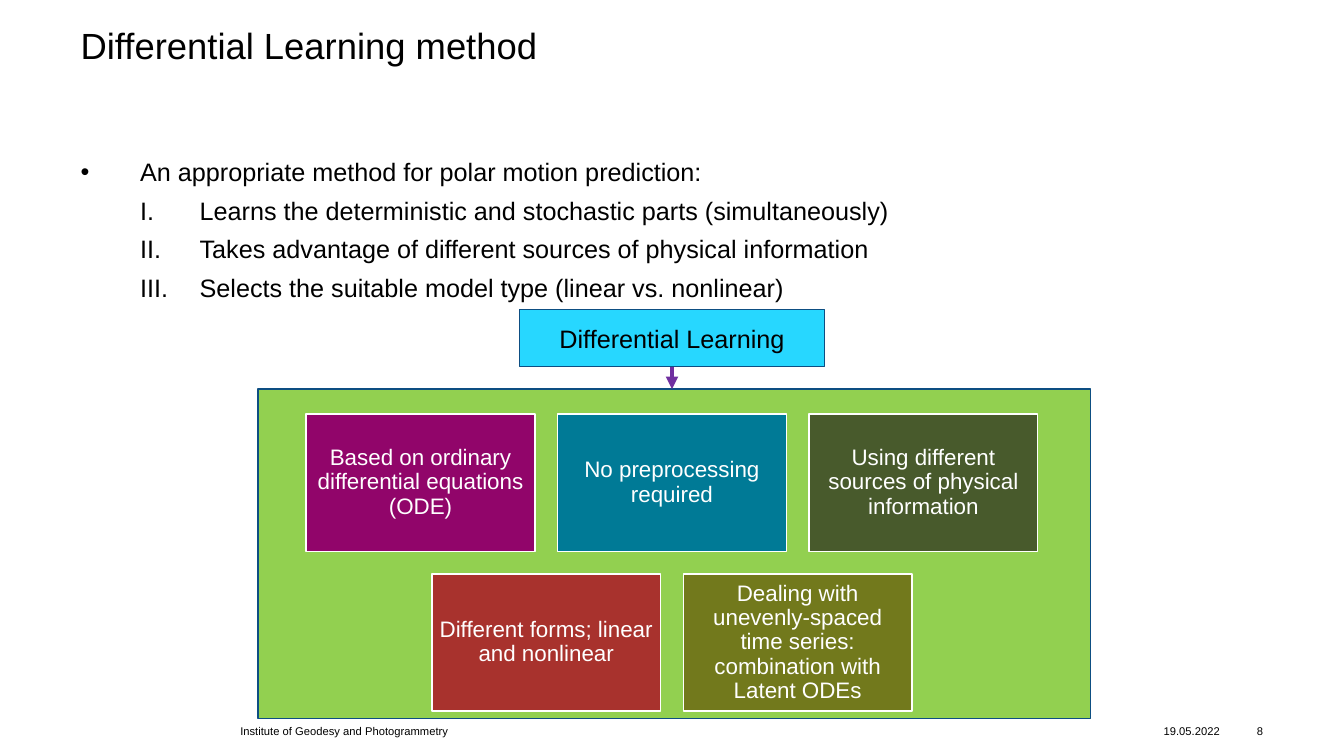
from lxml.etree import SubElement
from pptx import Presentation
from pptx.dml.color import RGBColor
from pptx.enum.shapes import MSO_CONNECTOR, MSO_SHAPE
from pptx.enum.text import MSO_ANCHOR, PP_ALIGN
from pptx.oxml.ns import qn
from pptx.util import Pt


def write(frame, text, size, color="000000", align=PP_ALIGN.LEFT, anchor=MSO_ANCHOR.MIDDLE, inset=0):
    """Fill the first paragraph of a text frame and return that paragraph."""
    frame.word_wrap = True
    frame.vertical_anchor = anchor
    frame.margin_left = frame.margin_right = frame.margin_top = frame.margin_bottom = Pt(inset)
    paragraph = frame.paragraphs[0]
    paragraph.alignment = align
    run = paragraph.add_run()
    run.text = text
    run.font.name = "Arial"
    run.font.size = Pt(size)
    run.font.color.rgb = RGBColor.from_string(color)
    return paragraph


def add_box(left, top, width, height, fill, line):
    box = slide.shapes.add_shape(MSO_SHAPE.RECTANGLE, Pt(left), Pt(top), Pt(width), Pt(height))
    box.shadow.inherit = False
    box.fill.solid()
    box.fill.fore_color.rgb = RGBColor.from_string(fill)
    box.line.color.rgb = RGBColor.from_string(line)
    box.line.width = Pt(1)
    return box


presentation = Presentation()
presentation.slide_width, presentation.slide_height = Pt(960), Pt(540)
slide = presentation.slides.add_slide(presentation.slide_layouts[5])

# Title
title = slide.shapes.title
title.left, title.top, title.width, title.height = Pt(57.6), Pt(20.2), Pt(844.6), Pt(70.6)
write(title.text_frame, "Differential Learning method", 26, anchor=MSO_ANCHOR.TOP).line_spacing = 0.9

# Advantages: one bullet with a numbered level below it
advantages = slide.shapes.add_textbox(Pt(57.6), Pt(111.6), Pt(844.6), Pt(108)).text_frame
write(advantages, "An appropriate method for polar motion prediction:", 18, anchor=MSO_ANCHOR.TOP)
for advantage in [
    "Learns the deterministic and stochastic parts (simultaneously)",
    "Takes advantage of different sources of physical information",
    "Selects the suitable model type (linear vs. nonlinear)",
]:
    paragraph = advantages.add_paragraph()
    paragraph.level = 1
    paragraph.space_before = Pt(6)
    run = paragraph.add_run()
    run.text = advantage
    run.font.name = "Arial"
    run.font.size = Pt(18)
    run.font.color.rgb = RGBColor.from_string("000000")

INDENT = Pt(42.5)
for paragraph in advantages.paragraphs:
    properties = paragraph._p.get_or_add_pPr()
    properties.set("marL", str(INDENT * (paragraph.level + 1)))
    properties.set("indent", str(-INDENT))
    SubElement(properties, qn("a:buFont"), typeface="Arial")
    if paragraph.level:
        SubElement(properties, qn("a:buAutoNum"), type="romanUcPeriod")
    else:
        SubElement(properties, qn("a:buChar"), char="•")

# Diagram: heading, arrow and panel of cards
CENTER = 480
add_box(184.3, 278, 594.7, 235.4, "92D050", "0D4E82")
heading = add_box(CENTER - 109, 221, 218, 41, "27D7FF", "0D4E82")
write(heading.text_frame, "Differential Learning", 18, align=PP_ALIGN.CENTER)

arrow = slide.shapes.add_connector(MSO_CONNECTOR.STRAIGHT, Pt(CENTER), Pt(262), Pt(CENTER), Pt(278))
arrow.begin_connect(heading, 2)
arrow.line.color.rgb = RGBColor.from_string("7030A0")
arrow.line.width = Pt(3)
SubElement(arrow.line._get_or_add_ln(), qn("a:tailEnd"), type="triangle")
SubElement(arrow._element.spPr, qn("a:effectLst"))

CARD_WIDTH, CARD_HEIGHT, GAP = 163.4, 98, 16.2
card_rows = [
    [
        ("Based on ordinary differential equations (ODE)", "91056A"),
        ("No preprocessing required", "007A96"),
        ("Using different sources of physical information", "485A2C"),
    ],
    [
        ("Different forms; linear and nonlinear", "A8322D"),
        ("Dealing with unevenly-spaced time series: combination with Latent ODEs", "72791C"),
    ],
]
for row, cards in enumerate(card_rows):
    row_width = len(cards) * (CARD_WIDTH + GAP) - GAP
    top = 295.8 + row * (CARD_HEIGHT + GAP)
    for column, (feature, fill) in enumerate(cards):
        left = CENTER - row_width / 2 + column * (CARD_WIDTH + GAP)
        card = add_box(left, top, CARD_WIDTH, CARD_HEIGHT, fill, "FFFFFF")
        label = write(card.text_frame, feature, 16, "FFFFFF", PP_ALIGN.CENTER, inset=4.8)
        label.line_spacing = 0.9

# Footer
for text, left, width, align in [
    ("Institute of Geodesy and Photogrammetry", 171.6, 425.5, PP_ALIGN.LEFT),
    ("19.05.2022", 831.2, 48.2, PP_ALIGN.LEFT),
    ("8", 877, 25.2, PP_ALIGN.RIGHT),
]:
    footer = slide.shapes.add_textbox(Pt(left), Pt(513.4), Pt(width), Pt(17.3))
    write(footer.text_frame, text, 8, align=align)

presentation.save("out.pptx")
